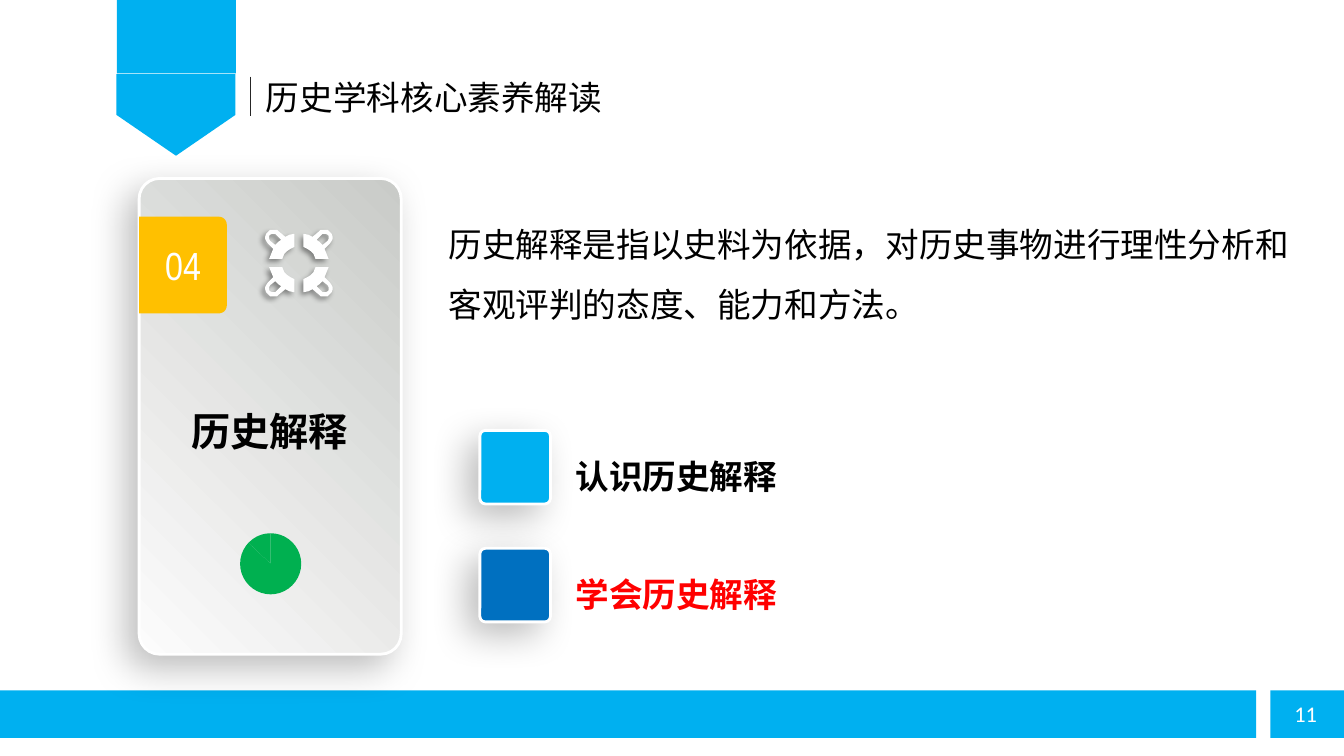
import math

import pptx
import pptx.chart.data
import pptx.dml.color
import pptx.enum.chart
import pptx.enum.shapes
import pptx.enum.text
import pptx.oxml
import pptx.oxml.ns
import pptx.util

Inches = pptx.util.Inches
Pt = pptx.util.Pt
Shape = pptx.enum.shapes.MSO_SHAPE

COLORS = {
    "sky": "00B0F0", "blue": "0070C0", "amber": "FFC000", "green": "00B050",
    "red": "FF0000", "black": "000000", "white": "FFFFFF", "rule": "262626",
    "card_dark": "C9CBC8", "card_light": "FCFCFC",
}
HAN = "Noto Sans CJK SC"

BANDS = [
    (Shape.RECTANGLE, (1.16, 0, 1.18, 0.73), 0),
    (Shape.PENTAGON, (1.34, 0.55, 0.81, 1.18), 90),
    (Shape.RECTANGLE, (0, 6.85, 12.46, 0.47), 0),
    (Shape.RECTANGLE, (12.6, 6.85, 0.74, 0.47), 0),
]
CARD = (1.38, 1.77, 2.6, 4.72)
TAB = (1.38, 2.15, 0.87, 0.96)
TAB_RADIUS = 0.08
TAB_STEPS = 6
POINTS = [("认识历史解释", "sky", "black"), ("学会历史解释", "blue", "red")]
POINT_TOP, POINT_STEP = 4.27, 1.17
PIE_BOX = (2.02, 5.15, 1.33, 0.88)
PIE_VALUES = (87, 13)
PIE_LAYOUT = {"x": 0.27, "y": 0.16, "w": 0.46, "h": 0.69}

TEXTS = [
    ("历史学科核心素养解读", (2.54, 0.71, 3.76, 0.5), dict(size=24)),
    ("历史解释是指以史料为依据，对历史事物进行理性分析和客观评判的态度、能力和方法。",
     (4.35, 1.97, 8.54, 1.31), dict(size=24, spacing=1.5)),
    ("04", (1.49, 2.34, 0.65, 0.57),
     dict(size=28, font="Arial Narrow", color="white", center=True)),
    ("历史解释", (1.4, 3.99, 2.55, 0.57), dict(size=28, bold=True, center=True)),
    ("11", (12.74, 6.9, 0.46, 0.37),
     dict(size=16, font="Calibri", color="white", wrap=False)),
]

ICON_CENTER = (2965, 2610)
ICON_PETAL = [
    (165, 40), (295, 40), (275, 90), (255, 140), (305, 190), (325, 220), (335, 240),
    (335, 260), (325, 290), (305, 310), (285, 330), (215, 330), (195, 310), (135, 260),
    (95, 280), (45, 290), (45, 160), (85, 140), (115, 120), (145, 90),
]
ICON_HOLE = [
    (235, 180), (205, 210), (175, 230), (225, 280), (235, 290), (265, 290),
    (285, 280), (295, 270), (295, 240), (285, 220),
]


def rgb(name):
    return pptx.dml.color.RGBColor.from_string(COLORS[name])


def place(box):
    return [Inches(length) for length in box]


def paint(shape, color):
    shape.shadow.inherit = False
    shape.fill.solid()
    shape.fill.fore_color.rgb = rgb(color)
    shape.line.fill.background()


def add_shadow(shape, opacity, blur, distance):
    effects = shape.element.spPr.find(pptx.oxml.ns.qn("a:effectLst"))
    effects.append(pptx.oxml.parse_xml(
        f'<a:outerShdw {pptx.oxml.ns.nsdecls("a")} blurRad="{Pt(blur)}" '
        f'dist="{Pt(distance)}" dir="{135 * 60000}" algn="tr" rotWithShape="0">'
        f'<a:srgbClr val="{COLORS["black"]}"><a:alpha val="{opacity * 1000}"/>'
        f'</a:srgbClr></a:outerShdw>'))


def add_block(page, kind, box, color):
    shape = page.shapes.add_shape(kind, *place(box))
    paint(shape, color)
    return shape


def add_raised(page, box, color):
    shape = add_block(page, Shape.ROUNDED_RECTANGLE, box, color)
    shape.adjustments[0] = 0.078
    shape.line.color.rgb = rgb("white")
    shape.line.width = Pt(2)
    add_shadow(shape, 26, 27, 12)
    return shape


def add_outline(page, contours, color):
    first, *others = contours
    builder = page.shapes.build_freeform(*first[0], scale=Inches(1) / 1000)
    builder.add_line_segments(first[1:], close=True)
    for contour in others:
        builder.move_to(*contour[0])
        builder.add_line_segments(contour[1:], close=True)
    shape = builder.convert_to_shape()
    paint(shape, color)
    return shape


def add_text(page, text, box, size, font=HAN, color="black", bold=False,
             center=False, spacing=None, wrap=True):
    frame = page.shapes.add_textbox(*place(box)).text_frame
    frame.word_wrap = wrap
    frame.auto_size = pptx.enum.text.MSO_AUTO_SIZE.SHAPE_TO_FIT_TEXT
    para = frame.paragraphs[0]
    if center:
        para.alignment = pptx.enum.text.PP_ALIGN.CENTER
    if spacing:
        para.line_spacing = spacing
    span = para.add_run()
    span.text = text
    span.font.size = Pt(size)
    span.font.bold = bold
    span.font.name = font
    span.font.color.rgb = rgb(color)
    east = span.font._element.makeelement(pptx.oxml.ns.qn("a:ea"), {"typeface": font})
    span.font._element.append(east)


def add_tab(page):
    left, top, width, height = TAB
    right, bottom = left + width, top + height
    corners = [(right - TAB_RADIUS, top + TAB_RADIUS, -90),
               (right - TAB_RADIUS, bottom - TAB_RADIUS, 0)]
    edge = [(left, top)]
    for x, y, start in corners:
        for step in range(TAB_STEPS + 1):
            angle = math.radians(start + 90 * step / TAB_STEPS)
            edge.append((x + TAB_RADIUS * math.cos(angle), y + TAB_RADIUS * math.sin(angle)))
    edge.append((left, bottom))
    add_outline(page, [[(x * 1000, y * 1000) for x, y in edge]], "amber")


def add_icon(page):
    x, y = ICON_CENTER
    contours = [[(x + across * dx, y + down * dy) for dx, dy in contour]
                for across in (-1, 1) for down in (-1, 1)
                for contour in (ICON_PETAL, ICON_HOLE)]
    add_shadow(add_outline(page, contours, "white"), 40, 4, 3)


def add_pie(page):
    data = pptx.chart.data.CategoryChartData()
    data.categories = ["1", "2"]
    data.add_series("Series 1", PIE_VALUES)
    chart = page.shapes.add_chart(
        pptx.enum.chart.XL_CHART_TYPE.PIE, *place(PIE_BOX), data).chart
    chart.has_legend = False
    chart.has_title = False
    chart.font.size = Pt(18)
    chart.font.name = "Calibri"
    chart.font.color.rgb = rgb("black")
    plot = chart.plots[0]
    plot.vary_by_categories = False
    for index in range(len(PIE_VALUES)):
        wedge = plot.series[0].points[index].format
        wedge.fill.solid()
        wedge.fill.fore_color.rgb = rgb("green")
        wedge.line.fill.background()
    area = chart._chartSpace.chart.plotArea
    for layout in area.findall(pptx.oxml.ns.qn("c:layout")):
        area.remove(layout)
    sizes = "".join(f'<c:{key} val="{value}"/>' for key, value in PIE_LAYOUT.items())
    area.insert(0, pptx.oxml.parse_xml(
        f'<c:layout {pptx.oxml.ns.nsdecls("c")}><c:manualLayout>'
        '<c:layoutTarget val="inner"/><c:xMode val="edge"/><c:yMode val="edge"/>'
        f'{sizes}</c:manualLayout></c:layout>'))


def main():
    deck = pptx.Presentation()
    deck.slide_width, deck.slide_height = Inches(13.33), Inches(7.5)
    page = deck.slides.add_slide(deck.slide_layouts[6])

    for kind, box, turn in BANDS:
        add_block(page, kind, box, "sky").rotation = turn
    rule = page.shapes.add_connector(
        pptx.enum.shapes.MSO_CONNECTOR.STRAIGHT, *place((2.48, 0.76, 2.48, 1.15)))
    rule.line.color.rgb = rgb("rule")
    rule.line.width = Pt(0.75)
    rule.element.spPr.append(
        rule.element.makeelement(pptx.oxml.ns.qn("a:effectLst"), {}))

    card = add_raised(page, CARD, "card_light")
    card.fill.gradient()
    card.fill.gradient_angle = 225
    for stop, color in zip(card.fill.gradient_stops, ("card_dark", "card_light")):
        stop.color.rgb = rgb(color)
    add_tab(page)
    add_icon(page)
    add_pie(page)

    for index, (label, fill, ink) in enumerate(POINTS):
        top = POINT_TOP + index * POINT_STEP
        add_raised(page, (4.76, top, 0.7, 0.73), fill)
        add_text(page, label, (5.61, top, 6.67, 0.64), 24, color=ink, bold=True, spacing=1.5)
    for text, box, style in TEXTS:
        add_text(page, text, box, **style)
    deck.save("out.pptx")


if __name__ == "__main__":
    main()
